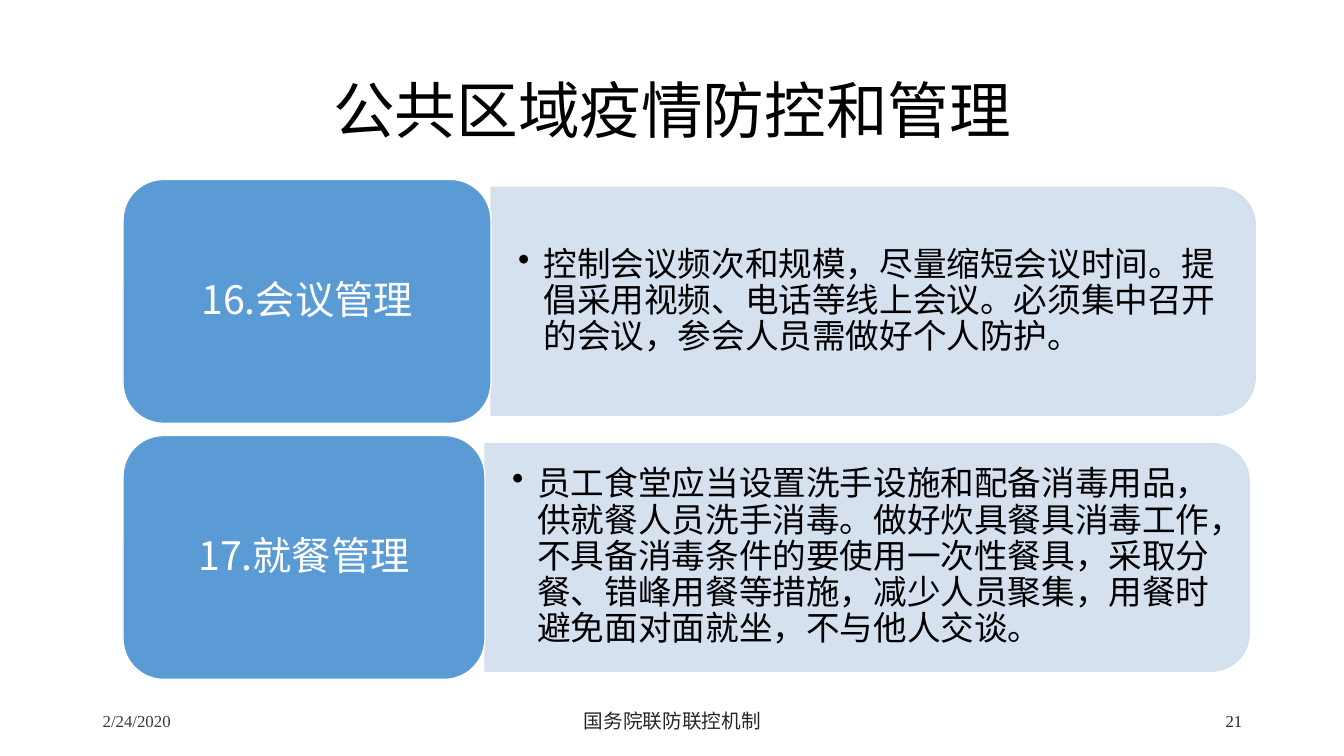
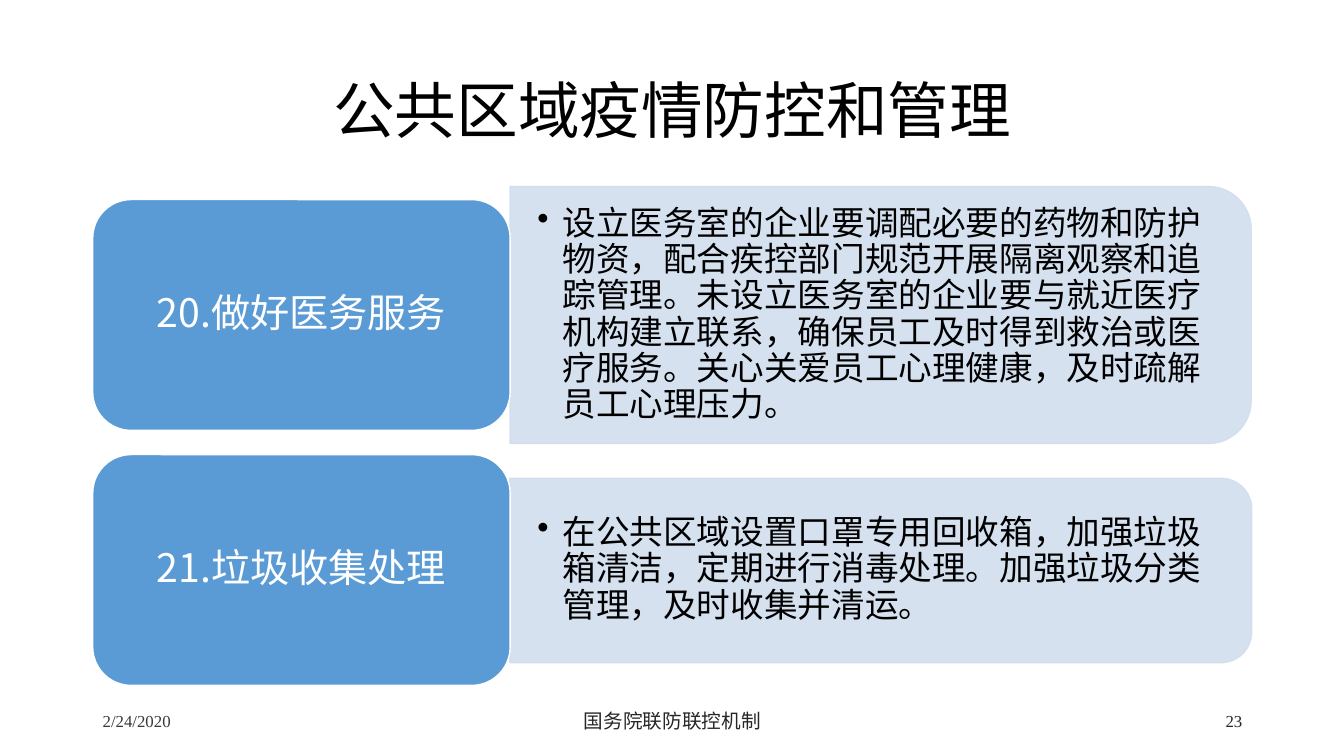
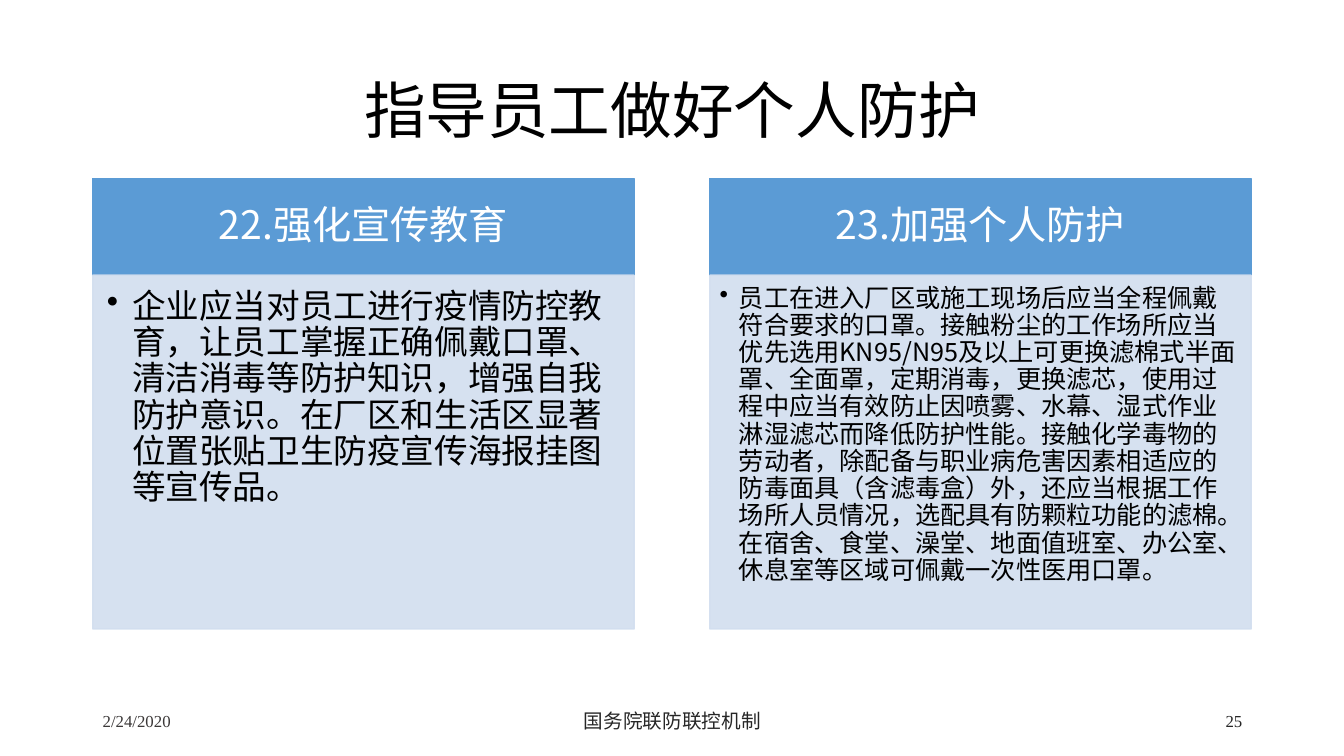
"""Build three slides on epidemic control at work."""
from lxml.etree import SubElement
from pptx import Presentation
from pptx.dml.color import RGBColor
from pptx.enum.shapes import MSO_SHAPE
from pptx.enum.text import MSO_ANCHOR, MSO_AUTO_SIZE, PP_ALIGN
from pptx.oxml.ns import qn
from pptx.util import Pt

PX = 9144
SANS = "Noto Sans CJK SC"
SERIF = "Times New Roman"
HUES = {"blue": "5B9BD5", "pale": "D2DEEF", "white": "FFFFFF",
        "black": "000000", "date": "3B3838", "foot": "262626"}
LEFT, MID, RIGHT = PP_ALIGN.LEFT, PP_ALIGN.CENTER, PP_ALIGN.RIGHT


def block(slide, kind, area, fill, edge):
    shape = slide.shapes.add_shape(kind, *[n * PX for n in area])
    shape.shadow.inherit = False
    shape.fill.solid()
    shape.fill.fore_color.rgb = RGBColor.from_string(HUES[fill])
    shape.line.color.rgb = RGBColor.from_string(HUES[edge])
    shape.line.width = Pt(1)
    if fill == "pale":
        for tint in shape.element.iter(qn("a:srgbClr")):
            SubElement(tint, qn("a:alpha"), val="90000")
    return shape


def write(shape, text, size, hue, align=MID, pads=(10, 5, 10, 5),
          face=SANS, space=0.9, dent=0, anchor=MSO_ANCHOR.MIDDLE):
    frame = shape.text_frame
    frame.word_wrap = True
    frame.auto_size = MSO_AUTO_SIZE.NONE
    frame.vertical_anchor = anchor
    frame.margin_left, frame.margin_top, frame.margin_right, frame.margin_bottom = [
        n * PX for n in pads]
    frame.text = text
    para = frame.paragraphs[0]
    para.alignment = align
    para.line_spacing = space
    props = para._p.get_or_add_pPr()
    if dent:
        props.set("marL", str(dent * PX))
        props.set("indent", str(-dent * PX))
        SubElement(props, qn("a:buChar"), char="•")
    font = para.font
    font.size = Pt(size)
    font.name = face
    font.color.rgb = RGBColor.from_string(HUES[hue])
    SubElement(props.find(qn("a:defRPr")), qn("a:ea"), typeface=face)


deck = Presentation()
deck.slide_width, deck.slide_height = 1333 * PX, 750 * PX

pages = []
for title, number in [("公共区域疫情防控和管理", "21"),
                      ("公共区域疫情防控和管理", "23"),
                      ("指导员工做好个人防护", "25")]:
    slide = deck.slides.add_slide(deck.slide_layouts[5])
    pages.append(slide)
    head = slide.shapes.title
    head.left, head.top, head.width, head.height = [n * PX for n in (92, 40, 1150, 145)]
    write(head, title, 44, "black")
    for left, width, text, size, hue, align, face in [
            (92, 300, "2/24/2020", 12, "date", LEFT, SERIF),
            (442, 450, "国务院联防联控机制", 14, "foot", MID, SANS),
            (942, 300, number, 12, "foot", RIGHT, SERIF)]:
        foot = slide.shapes.add_textbox(left * PX, 695 * PX, width * PX, 40 * PX)
        write(foot, text, size, hue, align, face=face, space=1.0)

rows = [
    (0, 122, 487, 1245, 178, 242, 226, "16.会议管理",
     "控制会议频次和规模，尽量缩短会议时间。提倡采用视频、电话等线上会议。"
     "必须集中召开的会议，参会人员需做好个人防护。"),
    (0, 122, 481, 1239, 432, 242, 226, "17.就餐管理",
     "员工食堂应当设置洗手设施和配备消毒用品，供就餐人员洗手消毒。"
     "做好炊具餐具消毒工作，不具备消毒条件的要使用一次性餐具，"
     "采取分餐、错峰用餐等措施，减少人员聚集，用餐时避免面对面就坐，不与他人交谈。"),
    (1, 92, 506, 1241, 198, 229, 255, "20.做好医务服务",
     "设立医务室的企业要调配必要的药物和防护物资，配合疾控部门规范开展隔离观察和追踪管理。"
     "未设立医务室的企业要与就近医疗机构建立联系，确保员工及时得到救治或医疗服务。"
     "关心关爱员工心理健康，及时疏解员工心理压力。"),
    (1, 92, 506, 1242, 451, 229, 183, "21.垃圾收集处理",
     "在公共区域设置口罩专用回收箱，加强垃圾箱清洁，定期进行消毒处理。"
     "加强垃圾分类管理，及时收集并清运。"),
]
for page, left, split, right, top, tall, deep, label, text in rows:
    slide = pages[page]
    wide = right - split
    high = top + (tall - deep) // 2
    turn = (wide - deep) // 2
    panel = block(slide, MSO_SHAPE.ROUND_2_SAME_RECTANGLE,
                  (split + turn, high - turn, deep, wide), "pale", "pale")
    panel.rotation = 90
    inset = round(deep * 0.049)
    note = slide.shapes.add_textbox(split * PX, (high + inset) * PX,
                                    (wide - inset) * PX, (deep - 2 * inset) * PX)
    write(note, text, 24, "black", LEFT, (27, 14, 27, 14), dent=25)
    card = block(slide, MSO_SHAPE.ROUNDED_RECTANGLE,
                 (left, top, split - left, tall), "blue", "white")
    write(card, label, 28, "white", pads=(12, 6, 12, 6))

columns = [
    (92, 24, 25, (14, 14, 19, 21), "22.强化宣传教育",
     "企业应当对员工进行疫情防控教育，让员工掌握正确佩戴口罩、清洁消毒等防护知识，"
     "增强自我防护意识。在厂区和生活区显著位置张贴卫生防疫宣传海报挂图等宣传品。"),
    (704, 18, 19, (10, 10, 14, 16), "23.加强个人防护",
     "员工在进入厂区或施工现场后应当全程佩戴符合要求的口罩。"
     "接触粉尘的工作场所应当优先选用KN95/N95及以上可更换滤棉式半面罩、全面罩，"
     "定期消毒，更换滤芯，使用过程中应当有效防止因喷雾、水幕、湿式作业淋湿滤芯而降低防护性能。"
     "接触化学毒物的劳动者，除配备与职业病危害因素相适应的防毒面具（含滤毒盒）外，"
     "还应当根据工作场所人员情况，选配具有防颗粒功能的滤棉。"
     "在宿舍、食堂、澡堂、地面值班室、办公室、休息室等区域可佩戴一次性医用口罩。"),
]
for left, size, dent, pads, label, text in columns:
    band = block(pages[2], MSO_SHAPE.RECTANGLE, (left, 177, 537, 96), "blue", "blue")
    write(band, label, 28, "white", pads=(22, 12, 22, 12))
    body = block(pages[2], MSO_SHAPE.RECTANGLE, (left, 273, 537, 351), "pale", "pale")
    write(body, text, size, "black", LEFT, pads, dent=dent, anchor=MSO_ANCHOR.TOP)

deck.save("out.pptx")
